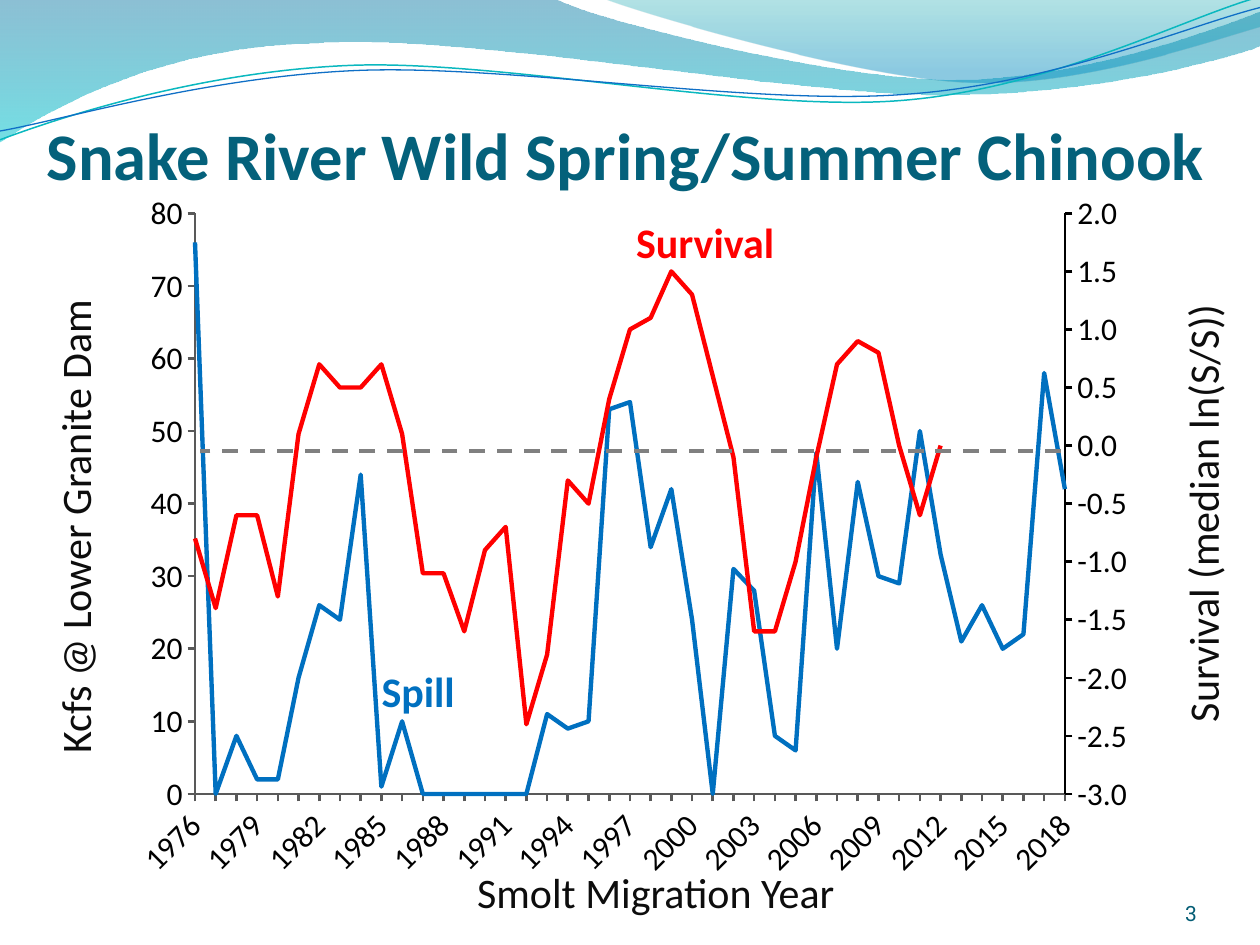
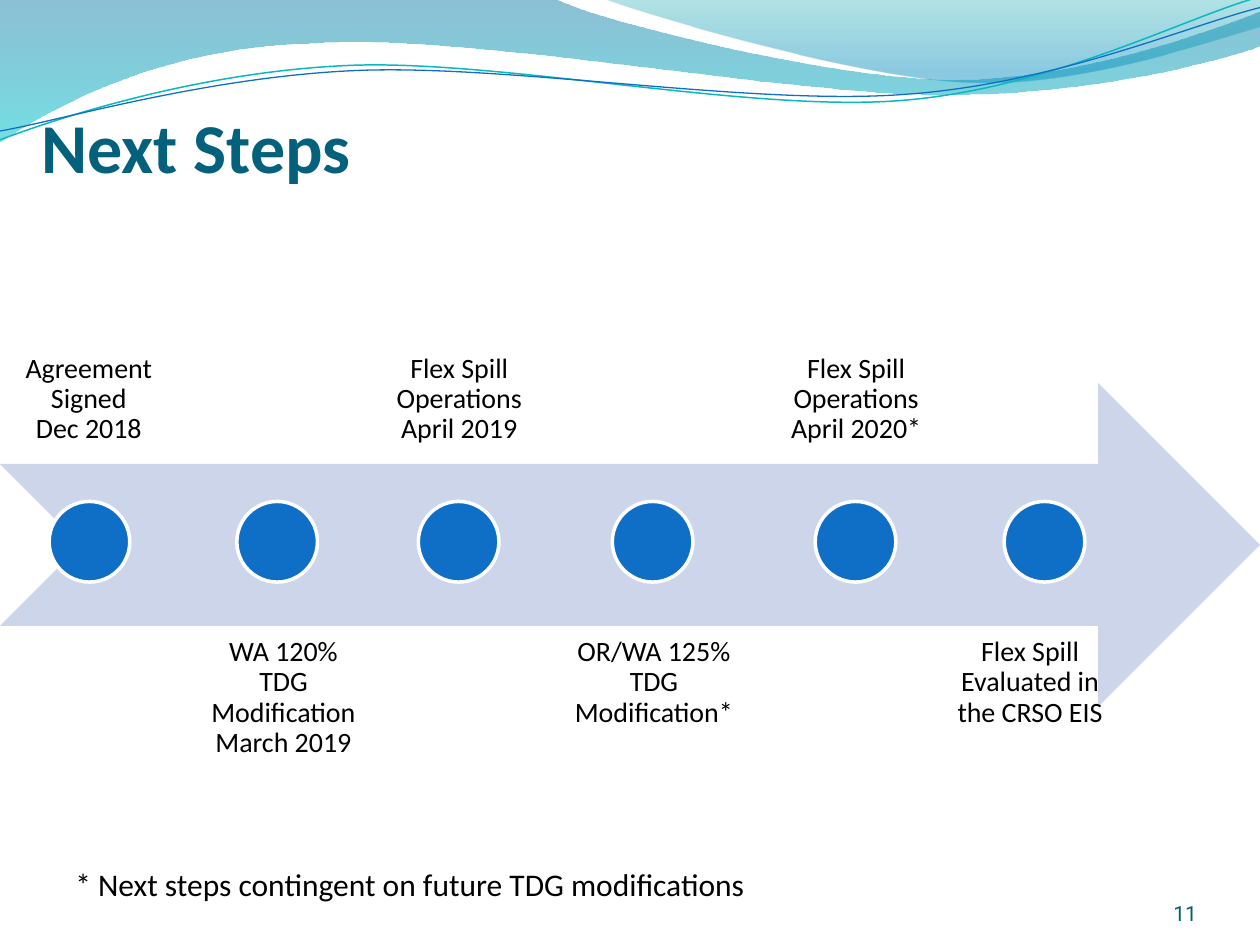
from copy import deepcopy
from dataclasses import dataclass

from lxml import etree
from pptx import Presentation
from pptx import util as u
from pptx.chart.axis import ValueAxis
from pptx.chart.data import CategoryChartData
from pptx.dml.color import RGBColor
from pptx.enum import chart as ch, dml, shapes, text
from pptx.oxml.ns import qn


@dataclass(frozen=True)
class Theme:
    heading: str = "04617B"
    page: str = "045D75"
    black: str = "000000"
    caption: str = "0D0D0D"
    spill: str = "0070C0"
    survival: str = "FF0000"
    axis: str = "595959"
    zero: str = "808080"
    arrow: str = "CCD5EA"
    dot: str = "0F6FC6"
    white: str = "FFFFFF"
    font: str = "Calibri"
    page_font: str = "Roboto"
    label_size: int = 24
    axis_size: int = 18
    step_size: int = 16
    page_size: int = 12


T = Theme()
SLIDE_W, SLIDE_H = 10, 7.5
CENTER, RIGHT = text.PP_ALIGN.CENTER, text.PP_ALIGN.RIGHT
TOP, BOTTOM = text.MSO_ANCHOR.TOP, text.MSO_ANCHOR.BOTTOM

# Wave band: start point, then segments of one point (line) or three (curve)
WAVE_FILLS = [
    ((0, 0), [(4.4, -.01), (4.76, .17, 6.64, .63, 7.58, .63),
              (8.53, .63, 9.58, .26, 10, .09), (10.01, .36),
              (9.83, .44, 8.7, .76, 7.46, .75), (6.22, .75, 3.82, .28, 2.57, .34),
              (1.29, .36, .46, .83, -.01, 1.13), (0, 0)],
     [(0, "0074A1", 45), (1, "00C6CF", 55)]),
    ((4.79, -.01), [(5.09, .11, 6.82, .62, 7.69, .65),
                    (8.56, .69, 9.61, .32, 10, .21), (10, 0), (4.79, -.01)],
     [(0, "00A1A9", 30), (.8, "008BBF", 45)]),
]
WAVE_LINES = [
    ((0, 1.11), [(.48, .93, 1.58, .57, 2.77, .52), (3.95, .47, 5.93, .89, 7.13, .8),
                 (8.33, .71, 9.38, .15, 9.98, -.02)], "0AB8BF", .85),
    ((0, 1.04), [(.47, .96, 1.64, .61, 2.83, .56), (4.03, .51, 5.97, .84, 7.17, .75),
                 (8.36, .67, 9.41, .21, 10, .06)], "0F6FC6", .75),
]

# Chart content
YEARS = range(1976, 2019)
SPILL = [76, 0, 8, 2, 2, 16, 26, 24, 44, 1, 10, 0, 0, 0, 0, 0, 0, 11, 9, 10, 53, 54,
         34, 42, 24, 0, 31, 28, 8, 6, 47, 20, 43, 30, 29, 50, 33, 21, 26, 20, 22, 58, 42]
SURVIVAL = [-.8, -1.4, -.6, -.6, -1.3, .1, .7, .5, .5, .7, .1, -1.1, -1.1, -1.6, -.9,
            -.7, -2.4, -1.8, -.3, -.5, .4, 1, 1.1, 1.5, 1.3, .6, -.1, -1.6, -1.6, -1,
            -.1, .7, .9, .8, 0, -.6, 0]
SURVIVAL += [None] * (len(YEARS) - len(SURVIVAL))
PLOT = dict(x=.138, y=.045, w=.723, h=.758)

# wording, box, colour, bold, rotation, alignment
CHART_LABELS = [
    ("Survival", (4.95, 1.67, 1.5, .5), T.survival, True, 0, None),
    ("Spill", (2.93, 5.23, 1.5, .5), T.spill, True, 0, None),
    ("Kcfs @ Lower Granite Dam", (-1.62, 3.62, 4.42, .5), T.caption, False, 270, None),
    ("Smolt Migration Year", (3.37, 6.83, 3.67, .5), T.caption, False, 0, CENTER),
    ("Survival (median ln(S/S))", (7.33, 3.37, 4.42, .5), T.caption, False, 270, None),
]

# Timeline: wording, label left, label width, dot centre; labels alternate up and down
STEPS = [
    ("Agreement Signed\nDec 2018", 0, 1.41, .71),
    ("WA 120% TDG Modification\nMarch 2019", 1.52, 1.46, 2.2),
    ("Flex Spill Operations\nApril 2019", 2.98, 1.33, 3.64),
    ("OR/WA 125% TDG Modification*", 4.37, 1.64, 5.18),
    ("Flex Spill Operations April 2020*", 6.06, 1.47, 6.79),
    ("Flex Spill Evaluated in the CRSO EIS", 7.47, 1.41, 8.29),
]
BAND_TOP, BAND_H, DOT = 3.04, 2.57, .64
LABEL_TOPS = (1.08, 4.94)
FOOTNOTE = "* Next steps contingent on future TDG modifications"


def rgb(value):
    return RGBColor.from_string(value)


def inches(*lengths):
    return [u.Inches(length) for length in lengths]


def style_font(font, size, color, bold=False, name=T.font):
    font.size, font.bold, font.name = u.Pt(size), bold, name
    font.color.rgb = rgb(color)


def style_line(line, color, width):
    line.color.rgb = rgb(color)
    line.width = u.Pt(width)


def write(frame, words, size, color, bold=False, name=T.font, align=None,
          anchor=TOP, insets=(.1, .05, .1, .05), spacing=None):
    frame.word_wrap, frame.auto_size = True, text.MSO_AUTO_SIZE.NONE
    frame.vertical_anchor = anchor
    (frame.margin_left, frame.margin_top,
     frame.margin_right, frame.margin_bottom) = inches(*insets)
    paragraph = frame.paragraphs[0]
    paragraph.alignment = align or text.PP_ALIGN.LEFT
    paragraph.line_spacing = spacing
    for i, line in enumerate(words.split("\n")):
        if i:
            paragraph.add_line_break()
        run = paragraph.add_run()
        run.text = line
        style_font(run.font, size, color, bold, name)


def add_words(slide, box, *args, **kwargs):
    label = slide.shapes.add_textbox(*inches(*box))
    write(label.text_frame, *args, **kwargs)
    return label


# Shared wave band, title and page number
def add_wave(slide, start, segments, closed):
    """Draw through every point, then join each curve's three points into a Bézier."""
    points = [(x * 1000, y * 1000) for segment in segments
              for x, y in zip(segment[::2], segment[1::2])]
    builder = slide.shapes.build_freeform(start[0] * 1000, start[1] * 1000,
                                          scale=u.Inches(1) / 1000)
    builder.add_line_segments(points, close=closed)
    wave = builder.convert_to_shape()
    wave.shadow.inherit = False
    steps = iter(list(wave.element.iter(qn("a:lnTo"))))
    for segment in segments:
        first, *others = [next(steps) for _ in segment[::2]]
        if others:
            curve = etree.Element(qn("a:cubicBezTo"))
            first.addprevious(curve)
            for step in (first, *others):
                curve.append(step[0])
                step.getparent().remove(step)
    return wave


def put_waves_on_layout(slide):
    waves = []
    for start, segments, stops in WAVE_FILLS:
        wave = add_wave(slide, start, segments, True)
        wave.line.fill.background()
        wave.fill.gradient()
        wave.fill.gradient_angle = 270
        for stop, (position, color, _) in zip(wave.fill.gradient_stops, stops):
            stop.position, stop.color.rgb = position, rgb(color)
        for node, (_, _, opacity) in zip(wave.element.iter(qn("a:srgbClr")), stops):
            etree.SubElement(node, qn("a:alpha"), val=str(opacity * 1000))
        waves.append(wave)
    for start, segments, color, width in WAVE_LINES:
        wave = add_wave(slide, start, segments, False)
        wave.fill.background()
        style_line(wave.line, color, width)
        waves.append(wave)
    for depth, wave in enumerate(waves, 2):
        slide.slide_layout.shapes.element.insert(depth, wave.element)


def add_slide(prs, heading, box, size, page, spacing=None):
    slide = prs.slides.add_slide(prs.slide_layouts[5])
    title = slide.shapes.title
    title.left, title.top, title.width, title.height = inches(*box)
    write(title.text_frame, heading, size, T.heading, True, anchor=BOTTOM,
          insets=(0, .05, 0, 0), spacing=spacing)
    add_words(slide, (8.67, 6.95, .83, .4), page, T.page_size, T.page,
              name=T.page_font, align=RIGHT, anchor=BOTTOM, insets=(0, 0, 0, 0))
    return slide


# Chart
def style_axis(axis, color, number_format=None, scale=None):
    axis.has_major_gridlines = False
    axis.major_tick_mark = ch.XL_TICK_MARK.OUTSIDE
    style_line(axis.format.line, color, 1.5)
    style_font(axis.tick_labels.font, T.axis_size, T.black)
    if scale:
        axis.minimum_scale, axis.maximum_scale, axis.major_unit = scale
        axis.tick_labels.number_format = number_format
        axis.tick_labels.number_format_is_linked = False


def set_val(parent, tag, value):
    parent.find(qn(tag)).set("val", value)


def split_to_right_axis(chart):
    """Give the second series its own line group and a value axis on the right."""
    area = chart._chartSpace.chart.plotArea
    left_lines = area.find(qn("c:lineChart"))
    years, left = area.find(qn("c:catAx")), area.find(qn("c:valAx"))
    for old in left.findall(qn("c:crossBetween")):
        left.remove(old)
    between = etree.Element(qn("c:crossBetween"), val="midCat")
    left.find(qn("c:crosses")).addnext(between)

    right_lines, right, hidden = deepcopy(left_lines), deepcopy(left), deepcopy(years)
    left_lines.remove(left_lines.findall(qn("c:ser"))[1])
    right_lines.remove(right_lines.findall(qn("c:ser"))[0])
    left_lines.addnext(right_lines)
    left.addnext(right)
    right.addnext(hidden)
    for node, value in zip(right_lines.findall(qn("c:axId")), ("5001", "5002")):
        node.set("val", value)
    for axis, own, other in ((hidden, "5001", "5002"), (right, "5002", "5001")):
        set_val(axis, "c:axId", own)
        set_val(axis, "c:crossAx", other)
    set_val(hidden, "c:delete", "1")
    set_val(right, "c:axPos", "r")
    set_val(right, "c:crosses", "max")

    for old in area.findall(qn("c:layout")):
        area.remove(old)
    layout = etree.Element(qn("c:layout"))
    manual = etree.SubElement(layout, qn("c:manualLayout"))
    for tag, value in dict(layoutTarget="inner", xMode="edge", yMode="edge", **PLOT).items():
        etree.SubElement(manual, qn("c:" + tag), val=str(value))
    area.insert(0, layout)
    return ValueAxis(left), ValueAxis(right)


def add_survival_chart(slide):
    data = CategoryChartData()
    data.categories = [str(year) for year in YEARS]
    data.add_series("Series 1", SPILL)
    data.add_series("Series 2", SURVIVAL)
    chart = slide.shapes.add_chart(ch.XL_CHART_TYPE.LINE,
                                   *inches(.23, 1.42, 9.55, 6.08), data).chart
    chart.has_legend = chart.has_title = False
    style_font(chart.font, 10, T.black)
    chart.plots[0].vary_by_categories = False
    for series, color in zip(chart.plots[0].series, (T.spill, T.survival)):
        series.smooth = False
        series.marker.style = ch.XL_MARKER_STYLE.NONE
        style_line(series.format.line, color, 2.5)

    spill_axis, survival_axis = split_to_right_axis(chart)
    style_axis(spill_axis, T.axis, "0", (0, 80, 10))
    style_axis(survival_axis, T.black, "0.0", (-3, 2, .5))
    years = chart.category_axis
    style_axis(years, T.axis)
    years.tick_label_position = ch.XL_TICK_LABEL_POSITION.LOW
    years_xml = years._element
    years_xml.find(qn("c:txPr")).find(qn("a:bodyPr")).set("rot", "-2700000")
    for tag, value in (("c:tickLblSkip", "3"), ("c:tickMarkSkip", "1")):
        skip = etree.Element(qn(tag), val=value)
        years_xml.find(qn("c:noMultiLvlLbl")).addprevious(skip)


def fill_chart_slide(slide):
    add_survival_chart(slide)
    for words, box, color, bold, rotation, align in CHART_LABELS:
        label = add_words(slide, box, words, T.label_size, color, bold, align=align)
        label.rotation = rotation
    zero = slide.shapes.add_connector(shapes.MSO_CONNECTOR.STRAIGHT,
                                      *inches(8.42, 3.58, 1.59, 3.58))
    style_line(zero.line, T.zero, 2.25)
    zero.line.dash_style = dml.MSO_LINE.DASH
    etree.SubElement(zero.element.spPr, qn("a:effectLst"))


# Timeline
def add_figure(slide, kind, box, color):
    figure = slide.shapes.add_shape(kind, *inches(*box))
    figure.shadow.inherit = False
    figure.fill.solid()
    figure.fill.fore_color.rgb = rgb(color)
    figure.line.fill.background()
    return figure


def fill_steps_slide(slide):
    kinds = shapes.MSO_SHAPE
    add_figure(slide, kinds.NOTCHED_RIGHT_ARROW, (0, BAND_TOP, SLIDE_W, BAND_H), T.arrow)
    for i, (words, left, width, centre) in enumerate(STEPS):
        add_words(slide, (left, LABEL_TOPS[i % 2], width, BAND_H), words, T.step_size,
                  T.black, align=CENTER, anchor=(BOTTOM, TOP)[i % 2],
                  insets=(.12,) * 4, spacing=.9)
        dot = add_figure(slide, kinds.OVAL, (centre - DOT / 2, 3.98, DOT, DOT), T.dot)
        style_line(dot.line, T.white, 2)
    add_words(slide, (.5, 6.82, 9.56, .4), FOOTNOTE, T.axis_size, T.black)


def main():
    prs = Presentation()
    prs.slide_width, prs.slide_height = inches(SLIDE_W, SLIDE_H)
    chart_slide = add_slide(prs, "Snake River Wild Spring/Summer Chinook",
                            (.37, .48, 9.67, 1.06), 38, "3")
    put_waves_on_layout(chart_slide)
    fill_chart_slide(chart_slide)
    fill_steps_slide(add_slide(prs, "Next Steps", (.33, .58, 9.5, .92), 40, "11", .9))
    prs.save("out.pptx")


if __name__ == "__main__":
    main()
